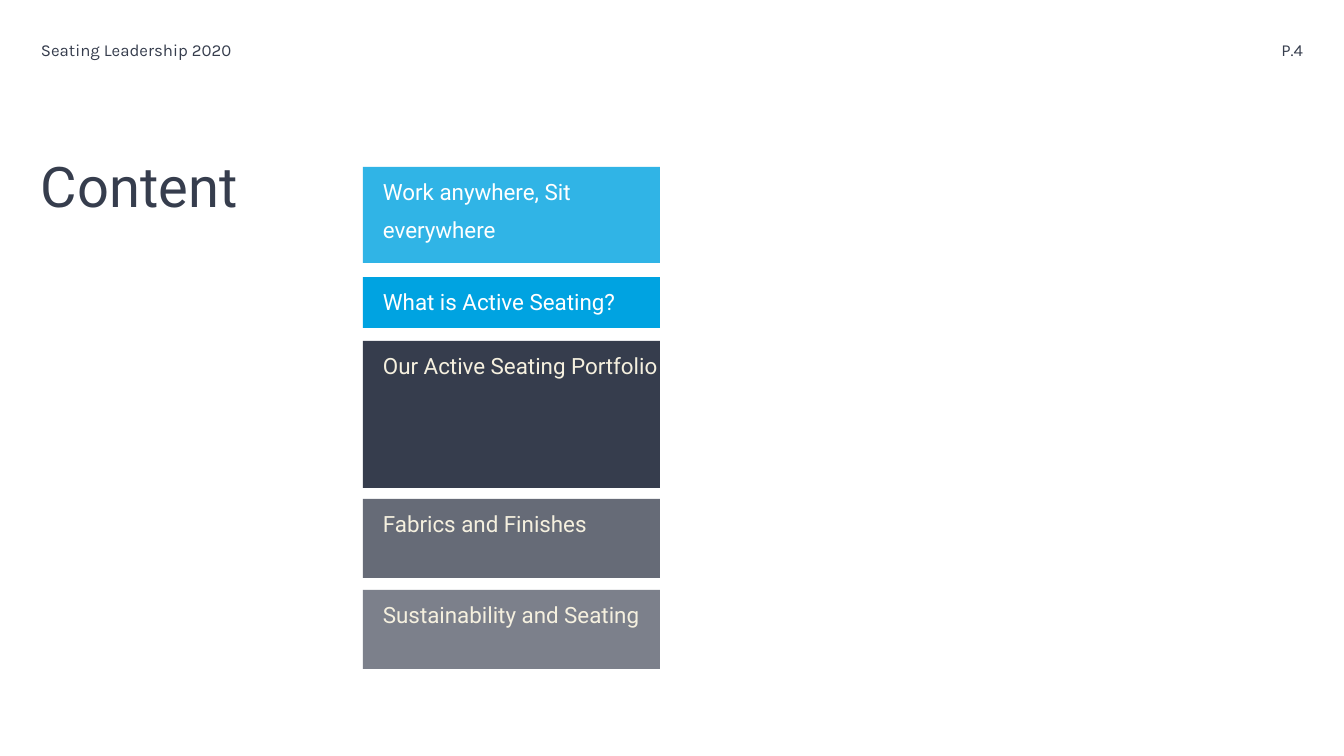
from lxml import etree
from pptx import Presentation
from pptx.dml.color import RGBColor
from pptx.enum.shapes import MSO_SHAPE
from pptx.enum.text import MSO_ANCHOR, PP_ALIGN
from pptx.oxml.ns import qn
from pptx.util import Emu, Pt

RECTANGLE = MSO_SHAPE.RECTANGLE
TOP = MSO_ANCHOR.TOP
LEFT, RIGHT = PP_ALIGN.LEFT, PP_ALIGN.RIGHT

NAVY = RGBColor(0x36, 0x3D, 0x4D)
BLUE = RGBColor(0x00, 0xA3, 0xE1)
CREAM = RGBColor(0xF5, 0xF0, 0xDF)
WHITE = RGBColor(0xFF, 0xFF, 0xFF)

EMU_PER_PX = 914400 / 100.8
SLIDE_SIZE = (1344, 756)

TITLE = ("Content", (41, 163, 322, 551))
HEADERS = [
    ("Seating Leadership 2020", (41, 40, 401, 40), LEFT),
    ("P.4", (1001, 40, 302, 40), RIGHT),
]
SECTION_LEFT, SECTION_WIDTH, SECTION_INSET = 363, 297, 20
SECTIONS = [
    ("Work anywhere, Sit everywhere", 167, 96, BLUE, 81, WHITE),
    ("What is Active Seating?", 277, 51, BLUE, 100, WHITE),
    ("Our Active Seating Portfolio", 341, 147, NAVY, 100, CREAM),
    ("Fabrics and Finishes", 499, 79, NAVY, 76, CREAM),
    ("Sustainability and Seating", 590, 79, NAVY, 65, CREAM),
]

TITLE_FONT = {"name": "Roboto", "size": Pt(40), "bold": False}
HEADER_FONT = {"name": "Karla", "size": Pt(12)}
SECTION_FONT = {"name": "Roboto", "size": Pt(16)}


def px(length):
    return Emu(round(length * EMU_PER_PX))


def place(shape, area):
    for name, length in zip(("left", "top", "width", "height"), area):
        setattr(shape, name, px(length))


def write(shape, text, font, color, align=LEFT, spacing=None, inset=0):
    frame = shape.text_frame
    frame_format = {
        "word_wrap": True,
        "vertical_anchor": TOP,
        "margin_left": px(inset),
        "margin_top": 0,
        "margin_right": 0,
        "margin_bottom": 0,
    }
    for name, value in frame_format.items():
        setattr(frame, name, value)
    para = frame.paragraphs[0]
    para.alignment = align
    para.line_spacing = spacing
    span = para.add_run()
    span.text = text
    for name, value in font.items():
        setattr(span.font, name, value)
    span.font.color.rgb = color


def paint(shape, color, opacity):
    shape.shadow.inherit = False
    shape.line.fill.background()
    shape.fill.solid()
    shape.fill.fore_color.rgb = color
    if opacity < 100:
        tint = shape.fill._xPr.find(qn("a:solidFill"))[0]
        etree.SubElement(tint, qn("a:alpha")).set("val", str(opacity * 1000))


def main():
    deck = Presentation()
    deck.slide_width, deck.slide_height = map(px, SLIDE_SIZE)
    page = deck.slides.add_slide(deck.slide_layouts[5])

    text, area = TITLE
    title = page.shapes.title
    place(title, area)
    write(title, text, TITLE_FONT, NAVY, spacing=Pt(40))

    for text, area, align in HEADERS:
        box = page.shapes.add_textbox(*map(px, area))
        write(box, text, HEADER_FONT, NAVY, align)

    for text, top, height, fill, opacity, color in SECTIONS:
        area = (SECTION_LEFT, top, SECTION_WIDTH, height)
        box = page.shapes.add_shape(RECTANGLE, *map(px, area))
        paint(box, fill, opacity)
        write(box, text, SECTION_FONT, color, spacing=Pt(27), inset=SECTION_INSET)

    deck.save("out.pptx")


if __name__ == "__main__":
    main()
